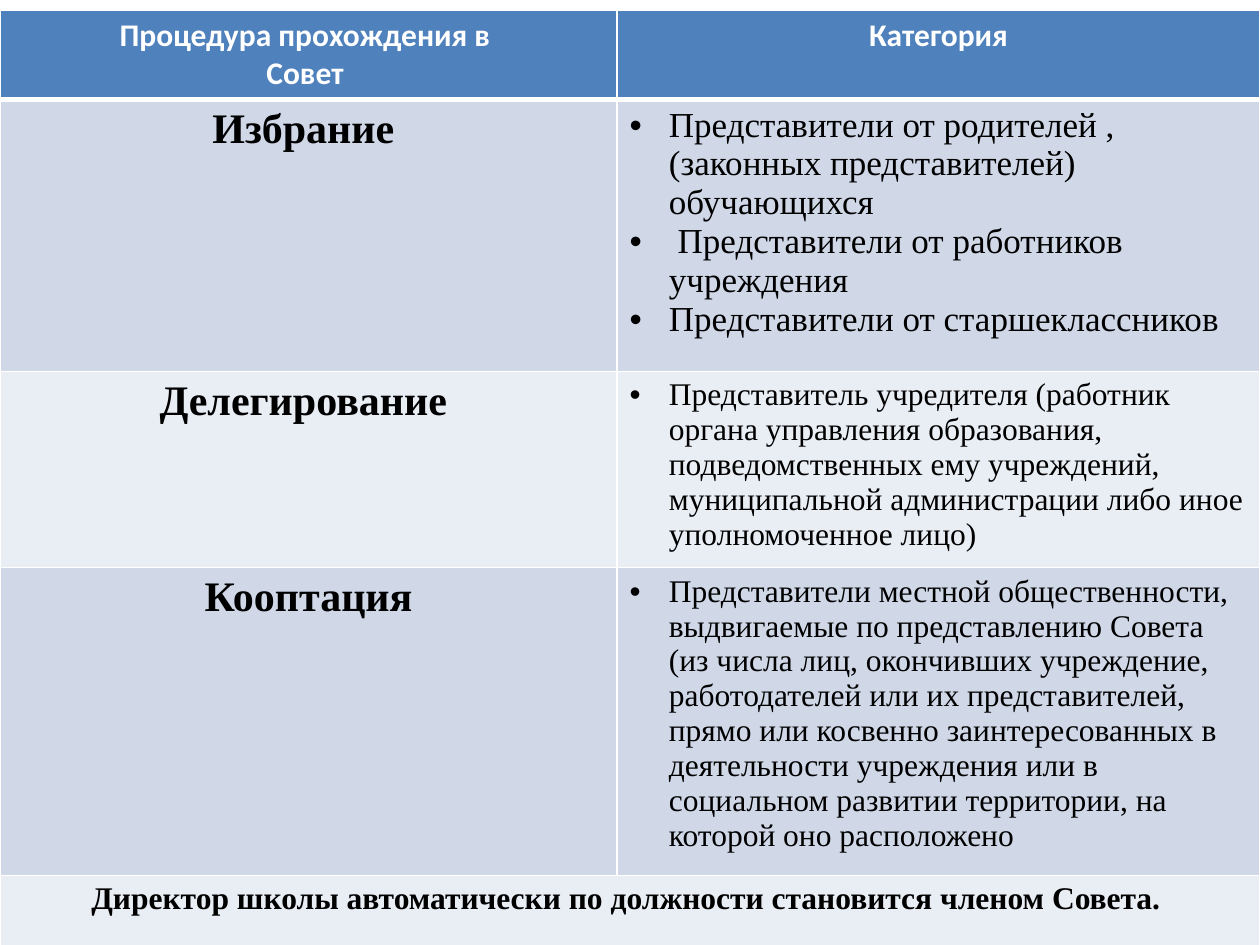
"""Build a slide with a table of the ways to join the Council."""
from lxml.etree import SubElement
from pptx import Presentation
from pptx.dml.color import RGBColor
from pptx.enum.text import PP_ALIGN
from pptx.oxml import parse_xml
from pptx.oxml.ns import nsdecls, qn
from pptx.util import Cm, Pt

COLORS = {"header": "4F81BD", "dark": "D0D8E8", "light": "E9EDF4",
          "white": "FFFFFF", "black": "000000"}
HEADER = [["Процедура прохождения в ", "Совет "], ["Категория"]]
PROCEDURES = [
    ("Избрание ", 20, [
        "Представители от родителей , (законных представителей) обучающихся",
        " Представители от работников учреждения",
        "Представители от старшеклассников"]),
    ("Делегирование ", 18, [
        "Представитель учредителя (работник органа управления образования, "
        "подведомственных ему учреждений, муниципальной администрации либо "
        "иное уполномоченное лицо)"]),
    ("Кооптация", 18, [
        "Представители местной общественности, выдвигаемые по представлению "
        "Совета (из числа лиц, окончивших учреждение, работодателей или их "
        "представителей, прямо или косвенно заинтересованных в деятельности "
        "учреждения или в социальном развитии территории, на которой оно "
        "расположено"]),
]
FOOTER = "Директор школы автоматически по должности становится членом Совета. "
COL_WIDTHS = [12.44, 12.96]
ROW_HEIGHTS = [1.8, 5.48, 3.96, 6.2, 1.73]
TOP = 0.2
INDENT = Cm(0.79)


def rgb(name):
    return RGBColor.from_string(COLORS[name])


def set_bullet(p):
    pPr = p._p.get_or_add_pPr()
    pPr.set("marL", str(INDENT))
    pPr.set("indent", str(-INDENT))
    SubElement(pPr, qn("a:buFont")).set("typeface", "Arial")
    SubElement(pPr, qn("a:buChar")).set("char", "•")


def set_borders(cell, top=1, bottom=1):
    tcPr = cell._tc.get_or_add_tcPr()
    sides = [("L", 1), ("R", 1), ("T", top), ("B", bottom)]
    for i, (side, width) in enumerate(sides):
        tcPr.insert(i, parse_xml(
            f'<a:ln{side} {nsdecls("a")} w="{Pt(width)}"><a:solidFill>'
            f'<a:srgbClr val="{COLORS["white"]}"/></a:solidFill></a:ln{side}>'))


def write(cell, lines, size, font="Times New Roman", color="black",
          bold=True, bullets=False):
    tf = cell.text_frame
    tf.text = "\n".join(lines)
    for p in tf.paragraphs:
        if bullets:
            set_bullet(p)
        else:
            p.alignment = PP_ALIGN.CENTER
        for r in p.runs:
            r.font.name = font
            r.font.size = Pt(size)
            r.font.bold = bold
            r.font.color.rgb = rgb(color)


def main():
    prs = Presentation()
    prs.slide_width, prs.slide_height = Cm(25.4), Cm(19.05)
    s = prs.slides.add_slide(prs.slide_layouts[6])
    table = s.shapes.add_table(
        len(ROW_HEIGHTS), len(COL_WIDTHS), Cm(0), Cm(TOP),
        Cm(sum(COL_WIDTHS)), Cm(sum(ROW_HEIGHTS))).table
    table.horz_banding = False
    for col, width in zip(table.columns, COL_WIDTHS):
        col.width = Cm(width)

    for i, (row, height) in enumerate(zip(table.rows, ROW_HEIGHTS)):
        row.height = Cm(height)
        fill = "header" if i == 0 else "dark" if i % 2 else "light"
        for cell in row.cells:
            cell.fill.solid()
            cell.fill.fore_color.rgb = rgb(fill)
            set_borders(cell, top=3 if i == 1 else 1, bottom=3 if i == 0 else 1)

    for j, lines in enumerate(HEADER):
        write(table.cell(0, j), lines, 18, "Calibri", "white")
    for i, (procedure, size, members) in enumerate(PROCEDURES, start=1):
        write(table.cell(i, 0), [procedure], 24)
        write(table.cell(i, 1), members, size, bold=False, bullets=True)
    last = len(ROW_HEIGHTS) - 1
    table.cell(last, 0).merge(table.cell(last, 1))
    write(table.cell(last, 0), [FOOTER], 18)

    prs.save("out.pptx")


if __name__ == "__main__":
    main()
